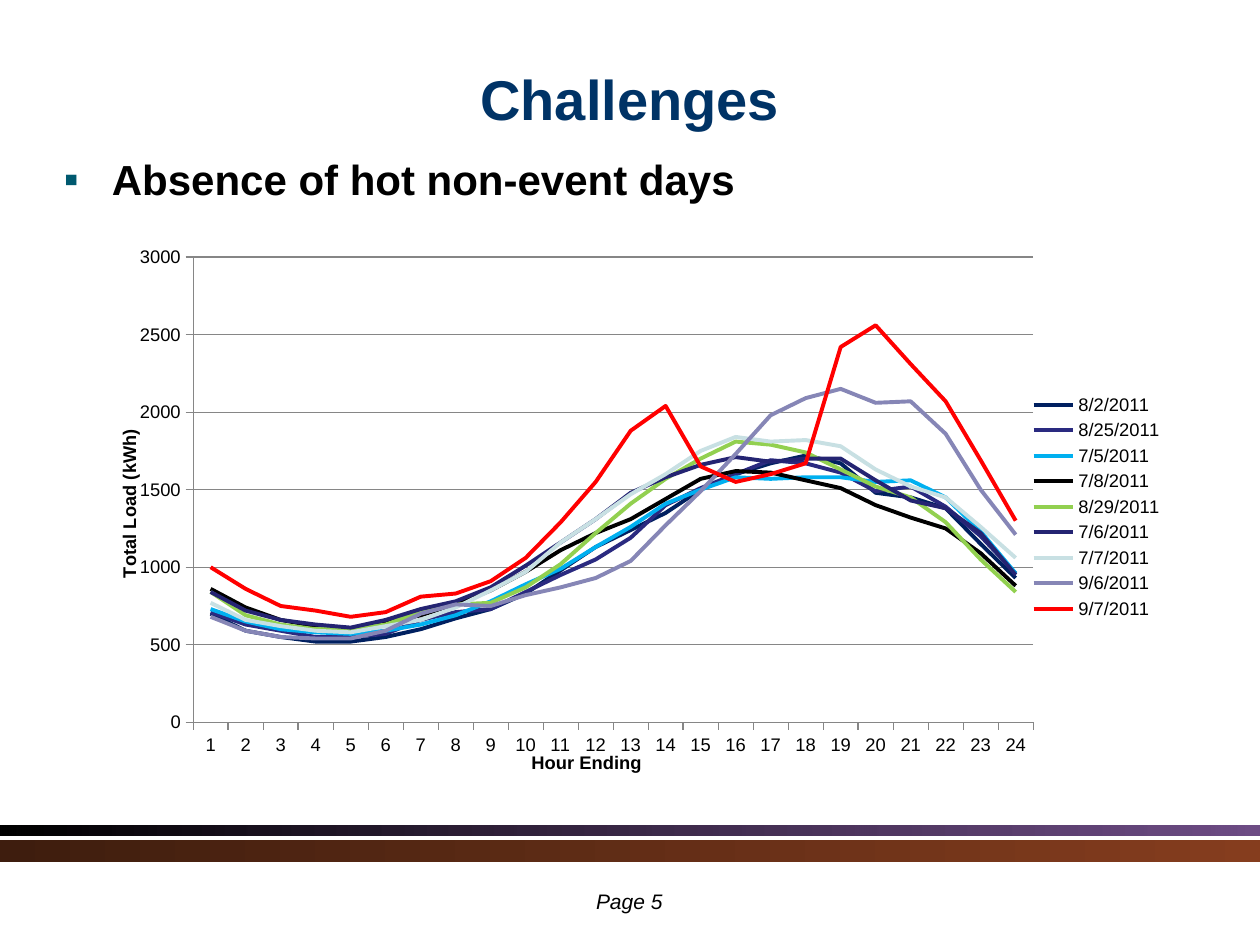
from lxml import etree
from pptx import Presentation
from pptx.chart.data import CategoryChartData
from pptx.dml.color import RGBColor
from pptx.enum.chart import XL_CHART_TYPE, XL_LEGEND_POSITION, XL_TICK_MARK
from pptx.enum.shapes import MSO_SHAPE
from pptx.enum.text import MSO_ANCHOR, PP_ALIGN
from pptx.oxml import parse_xml
from pptx.oxml.ns import nsdecls, qn
from pptx.util import Inches, Pt

LINE, RECT = XL_CHART_TYPE.LINE, MSO_SHAPE.RECTANGLE
RIGHT, OUT = XL_LEGEND_POSITION.RIGHT, XL_TICK_MARK.OUTSIDE
LEFT, MID = PP_ALIGN.LEFT, PP_ALIGN.CENTER
TOP, CENTER = MSO_ANCHOR.TOP, MSO_ANCHOR.MIDDLE

BLACK = RGBColor(0, 0, 0)
NAVY = RGBColor(0x00, 0x33, 0x66)
PLUM = RGBColor(0x54, 0x2D, 0x6F)
DARK = RGBColor(0x3E, 0x1D, 0x0E)
RUST = RGBColor(0x85, 0x3D, 0x1E)
GRAY = RGBColor(0x86, 0x86, 0x86)
DEEP = RGBColor(0x00, 0x20, 0x60)
INDIGO = RGBColor(0x2A, 0x2A, 0x80)
SKY = RGBColor(0x00, 0xB0, 0xF0)
GREEN = RGBColor(0x92, 0xD0, 0x50)
VIOLET = RGBColor(0x24, 0x24, 0x72)
PALE = RGBColor(0xC8, 0xE0, 0xE3)
LILAC = RGBColor(0x86, 0x86, 0xB6)
RED = RGBColor(0xFF, 0, 0)

# Content: hourly load of each day
LOADS = [
    ("8/2/2011", DEEP, [700, 590, 550, 520, 520, 550, 600, 670, 730, 830, 980, 1130,
                        1240, 1350, 1500, 1600, 1670, 1720, 1670, 1480, 1450, 1380, 1150, 930]),
    ("8/25/2011", INDIGO, [710, 630, 590, 550, 550, 570, 660, 710, 730, 840, 950, 1050,
                           1190, 1400, 1510, 1600, 1690, 1670, 1610, 1490, 1520, 1390, 1200, 960]),
    ("7/5/2011", SKY, [730, 650, 600, 580, 570, 590, 630, 690, 780, 890, 990, 1130,
                       1260, 1410, 1500, 1580, 1570, 1580, 1580, 1550, 1560, 1450, 1230, 960]),
    ("7/8/2011", BLACK, [860, 740, 660, 620, 590, 640, 690, 760, 850, 970, 1110, 1220,
                         1310, 1440, 1570, 1620, 1610, 1560, 1510, 1400, 1320, 1250, 1090, 880]),
    ("8/29/2011", GREEN, [840, 690, 630, 600, 600, 630, 710, 760, 770, 870, 1020, 1220,
                          1410, 1570, 1700, 1810, 1790, 1740, 1630, 1520, 1450, 1290, 1050, 840]),
    ("7/6/2011", VIOLET, [840, 720, 660, 630, 610, 660, 730, 780, 870, 1010, 1160, 1310,
                          1480, 1580, 1660, 1710, 1680, 1700, 1700, 1560, 1430, 1380, 1220, 950]),
    ("7/7/2011", PALE, [770, 660, 620, 590, 580, 620, 660, 740, 850, 970, 1160, 1310,
                        1470, 1600, 1750, 1840, 1810, 1820, 1780, 1630, 1520, 1450, 1260, 1060]),
    ("9/6/2011", LILAC, [680, 590, 550, 540, 540, 590, 700, 760, 750, 820, 870, 930,
                         1040, 1270, 1490, 1730, 1980, 2090, 2150, 2060, 2070, 1860, 1500, 1210]),
    ("9/7/2011", RED, [1000, 860, 750, 720, 680, 710, 810, 830, 910, 1060, 1290, 1550,
                       1880, 2040, 1650, 1550, 1600, 1670, 2420, 2560, 2310, 2070, 1690, 1300]),
]
# Text, place in inches, alignment, anchor, bullet, font values
TEXTS = [
    ("Challenges", (0.5, 0.3, 9, 0.95), MID, CENTER, None,
     {"size": Pt(32), "bold": True}, NAVY),
    ("Absence of hot non-event days", (0.41, 1.17, 9, 0.89), LEFT, TOP, "▪",
     {"size": Pt(24), "bold": True}, BLACK),
    ("Page 5", (3.93, 7, 2.13, 0.22), MID, TOP, None,
     {"size": Pt(12), "italic": True}, BLACK),
]
# Top, height, start colour, end colour, end opacity in percent
BANDS = [(6.55, 0.08, BLACK, PLUM, 85), (6.67, 0.17, DARK, RUST, 100)]
WIDE, HIGH = 10, 7.5


def style(font, color, **vals):
    for key, val in {"name": "Arial", **vals}.items():
        setattr(font, key, val)
    font.color.rgb = color


def lay(node, spot, inner=False):
    """Give a chart part a fixed place, as shares of the chart."""
    old = node.find(qn("c:layout"))
    if old is not None:
        node.remove(old)
    tags = '<c:layoutTarget val="inner"/>' if inner else ""
    tags += '<c:xMode val="edge"/><c:yMode val="edge"/>'
    tags += "".join(f'<c:{k} val="{v}"/>' for k, v in zip("xywh", spot))
    new = parse_xml(f'<c:layout {nsdecls("c")}><c:manualLayout>{tags}'
                    '</c:manualLayout></c:layout>')
    lead = [kid for kid in node if kid.tag in (qn("c:tx"), qn("c:legendPos"))]
    node.insert(len(lead), new)


deck = Presentation()
deck.slide_width, deck.slide_height = Inches(WIDE), Inches(HIGH)
slide = deck.slides.add_slide(deck.slide_layouts[6])

# Footer bands
for top, tall, start, end, solid in BANDS:
    band = slide.shapes.add_shape(RECT, 0, Inches(top), Inches(WIDE), Inches(tall))
    band.shadow.inherit = False
    band.line.fill.background()
    band.fill.gradient()
    band.fill.gradient_angle = 0
    for stop, color, spot in zip(band.fill.gradient_stops, (start, end), (0, 1)):
        stop.color.rgb, stop.position = color, spot
    tint = list(band.element.spPr.iter(qn("a:srgbClr")))[-1]
    etree.SubElement(tint, qn("a:alpha"), val=str(solid * 1000))

# Title, bullet line and page number
for text, spot, align, anchor, mark, vals, color in TEXTS:
    frame = slide.shapes.add_textbox(*map(Inches, spot)).text_frame
    frame.word_wrap, frame.vertical_anchor = True, anchor
    para = frame.paragraphs[0]
    para.alignment = align
    if mark:
        props = para._p.get_or_add_pPr()
        props.set("marL", str(Inches(0.38)))
        props.set("indent", str(-Inches(0.38)))
        hue = etree.SubElement(props, qn("a:buClr"))
        etree.SubElement(hue, qn("a:srgbClr"), val="00596F")
        etree.SubElement(props, qn("a:buFont"), typeface="Arial")
        etree.SubElement(props, qn("a:buChar"), char=mark)
    run = para.add_run()
    run.text = text
    style(run.font, color, **vals)

# Load chart
data = CategoryChartData()
data.categories = [str(hour) for hour in range(1, 25)]
for day, _, load in LOADS:
    data.add_series(day, load)
chart = slide.shapes.add_chart(LINE, *map(Inches, (0.9, 1.91, 8.44, 4.27)), data).chart
style(chart.font, BLACK, size=Pt(10.5))
chart.has_title = False
plot = chart.plots[0]
plot.vary_by_categories = False
for line, (_, color, _) in zip(plot.series, LOADS):
    line.smooth = False
    line.format.line.width = Pt(2.25)
    line.format.line.color.rgb = color
lay(chart._chartSpace.chart.plotArea, (0.075, 0.031, 0.79, 0.873), True)

# Axes and legend
hours, loads = chart.category_axis, chart.value_axis
for axis, name, spot in ((hours, "Hour Ending", (0.39, 0.95)),
                         (loads, "Total Load (kWh)", (0, 0.35))):
    axis.major_tick_mark = OUT
    axis.format.line.color.rgb = GRAY
    title = axis.axis_title
    title.text_frame.text = name
    style(title.text_frame.paragraphs[0].runs[0].font, BLACK, size=Pt(10.5), bold=True)
    lay(title._element, spot)
loads.minimum_scale, loads.maximum_scale, loads.major_unit = 0, 3000, 500
loads.has_major_gridlines = True
loads.major_gridlines.format.line.color.rgb = GRAY
chart.has_legend = True
key = chart.legend
key.position, key.include_in_layout = RIGHT, False
style(key.font, BLACK, size=Pt(10.5))
lay(key._element, (0.86, 0.28, 0.13, 0.44))

deck.save("out.pptx")
